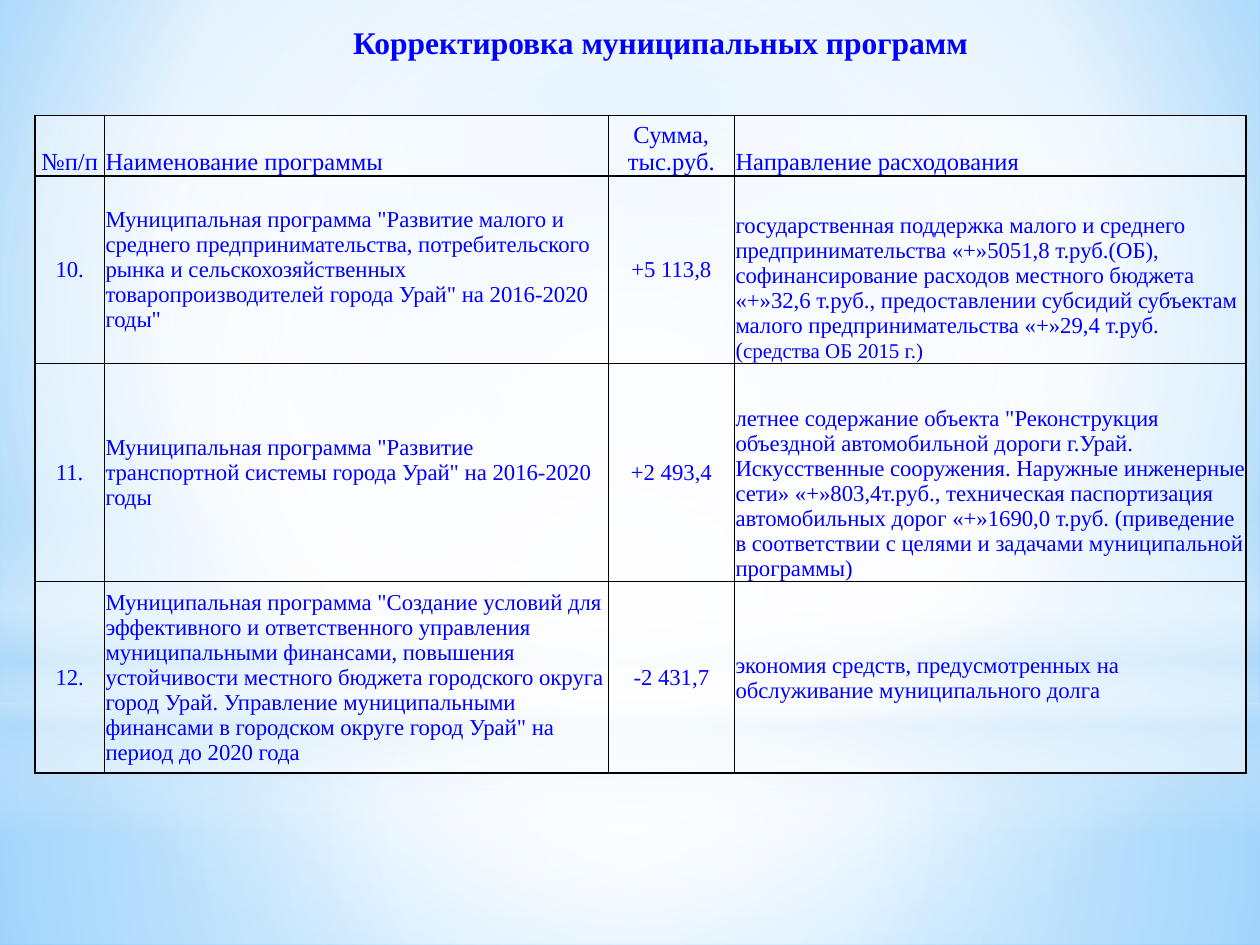
from lxml import etree
from pptx import Presentation
from pptx.dml.color import RGBColor
from pptx.enum.shapes import MSO_SHAPE
from pptx.enum.text import MSO_ANCHOR, PP_ALIGN
from pptx.oxml import parse_xml
from pptx.oxml.ns import nsdecls, qn
from pptx.util import Pt

RECT, OVAL = MSO_SHAPE.RECTANGLE, MSO_SHAPE.OVAL
MIDDLE, BOTTOM = MSO_ANCHOR.MIDDLE, MSO_ANCHOR.BOTTOM
LEFT, CENTER = PP_ALIGN.LEFT, PP_ALIGN.CENTER
BLUE = RGBColor(0x00, 0x00, 0xFF)
WHITE = RGBColor(0xFF, 0xFF, 0xFF)
BLACK = RGBColor(0x00, 0x00, 0x00)
PALE = RGBColor(0xB4, 0xDC, 0xFA)
SKY = RGBColor(0x9E, 0xD5, 0xFF)
DEEP_SKY = RGBColor(0x5B, 0xB9, 0xFF)
FONT = "Times New Roman"


def set_gradient(element, stops, focus=None):
    solid = next(element.iter(qn("a:solidFill")))
    gs = "".join(
        f'<a:gs pos="{pos * 1000}"><a:srgbClr val="{color}">'
        f'<a:alpha val="{alpha * 1000}"/></a:srgbClr></a:gs>'
        for pos, color, alpha in stops)
    if focus:
        rect = " ".join(f'{side}="{v * 1000}"' for side, v in zip("ltrb", focus))
        shade = f'<a:path path="circle"><a:fillToRect {rect}/></a:path>'
    else:
        shade = '<a:lin ang="5400000" scaled="0"/>'
    grad = parse_xml(f'<a:gradFill {nsdecls("a")} rotWithShape="1">'
                     f'<a:gsLst>{gs}</a:gsLst>{shade}</a:gradFill>')
    solid.getparent().replace(solid, grad)


def style_font(font, size):
    font.name = FONT
    font.size = Pt(size)
    font.color.rgb = BLUE


prs = Presentation()
prs.slide_width, prs.slide_height = Pt(720), Pt(540)
slide = prs.slides.add_slide(prs.slide_layouts[5])

slide.background.fill.solid()
set_gradient(slide.background._cSld.bg,
             [(0, SKY, 100), (60, WHITE, 100), (100, DEEP_SKY, 100)],
             (20, 10, 20, 60))

CENTRE = (50, 50, 50, 50)
glows = [
    (RECT, 401.8, 138.2, [(0, WHITE, 91), (37, WHITE, 76), (100, PALE, 79)], CENTRE),
    (RECT, 0, 401.8, [(0, WHITE, 89), (48, WHITE, 62), (100, PALE, 79)], CENTRE),
    (RECT, 296.6, 180, [(0, WHITE, 0), (29, WHITE, 30), (45, PALE, 40),
                        (55, WHITE, 26), (65, PALE, 60), (100, WHITE, 0)], None),
    (OVAL, 126, 401.8, [(0, WHITE, 100), (56, WHITE, 0)], CENTRE),
]
for kind, top, height, stops, focus in glows:
    s = slide.shapes.add_shape(kind, 0, Pt(top), Pt(720), Pt(height))
    s.shadow.inherit = False
    s.line.fill.background()
    s.fill.solid()
    set_gradient(s._element.spPr, stops, focus)

rows = [
    ("№п/п", "Наименование программы", "Сумма, тыс.руб.", "Направление расходования"),
    ("10.",
     'Муниципальная программа "Развитие малого и среднего предпринимательства, '
     'потребительского рынка и сельскохозяйственных товаропроизводителей города '
     'Урай" на 2016-2020 годы"',
     "+5 113,8",
     "государственная поддержка малого и среднего предпринимательства "
     "«+»5051,8 т.руб.(ОБ), софинансирование расходов местного бюджета "
     "«+»32,6 т.руб., предоставлении субсидий субъектам малого "
     "предпринимательства «+»29,4 т.руб. ("),
    ("11.",
     'Муниципальная программа "Развитие транспортной системы города Урай" '
     'на 2016-2020 годы',
     "+2 493,4",
     'летнее содержание объекта "Реконструкция объездной автомобильной дороги '
     'г.Урай. Искусственные сооружения. Наружные инженерные сети» '
     '«+»803,4т.руб., техническая паспортизация автомобильных дорог '
     '«+»1690,0 т.руб. (приведение в соответствии с целями и задачами '
     'муниципальной программы)'),
    ("12.",
     'Муниципальная программа "Создание условий для эффективного и ответственного '
     'управления муниципальными финансами, повышения устойчивости местного бюджета '
     'городского округа город Урай. Управление муниципальными финансами в городском '
     'округе город Урай" на период до 2020 года',
     "-2 431,7",
     "экономия средств, предусмотренных на обслуживание муниципального долга"),
]
col_widths = [39.6, 288, 72, 292.3]
row_heights = [34.5, 107.3, 124.6, 109.4]

table = slide.shapes.add_table(4, 4, Pt(20), Pt(66), Pt(sum(col_widths)),
                               Pt(sum(row_heights))).table
table.first_row = False
table.horz_banding = False
for col, width in zip(table.columns, col_widths):
    col.width = Pt(width)
for row, height in zip(table.rows, row_heights):
    row.height = Pt(height)

for i, texts in enumerate(rows):
    for j, text in enumerate(texts):
        cell = table.cell(i, j)
        cell.text = text
        cell.margin_left = cell.margin_right = cell.margin_top = Pt(0.7)
        cell.margin_bottom = 0
        cell.vertical_anchor = BOTTOM if i == 0 or (j == 3 and i < 3) else MIDDLE
        p = cell.text_frame.paragraphs[0]
        p.alignment = CENTER if j in (0, 2) else LEFT
        style_font(p.font, 14 if i == 0 else 13)
        cell.fill.solid()
        cell.fill.fore_color.rgb = WHITE
        tcPr = cell._tc.tcPr
        color = next(tcPr.iter(qn("a:srgbClr")))
        etree.SubElement(color, qn("a:alpha")).set("val", "46000")
        for k, side in enumerate("LRTB"):
            tcPr.insert(k, parse_xml(
                f'<a:ln{side} {nsdecls("a")} w="12700"><a:solidFill>'
                f'<a:srgbClr val="{BLACK}"/></a:solidFill></a:ln{side}>'))

r = table.cell(1, 3).text_frame.paragraphs[0].add_run()
r.text = "средства ОБ 2015 г.)"
r.font.size = Pt(12)

title = slide.shapes.title
title.left, title.top, title.width, title.height = Pt(60), Pt(9.4), Pt(635), Pt(29)
tf = title.text_frame
tf.text = "Корректировка муниципальных программ"
tf.word_wrap = True
tf.vertical_anchor = MIDDLE
p = tf.paragraphs[0]
p.alignment = CENTER
style_font(p.font, 18)
p.font.bold = True
title._element.getparent().append(title._element)

prs.save("out.pptx")
